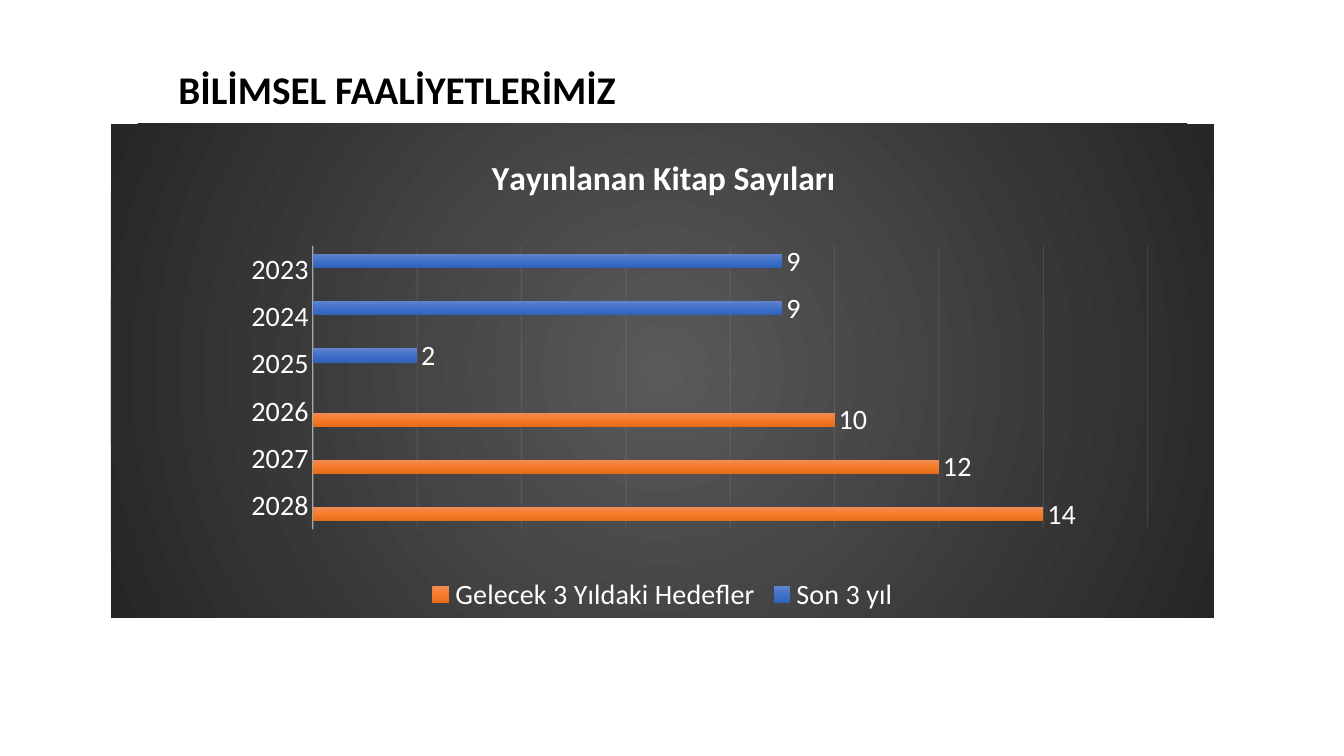
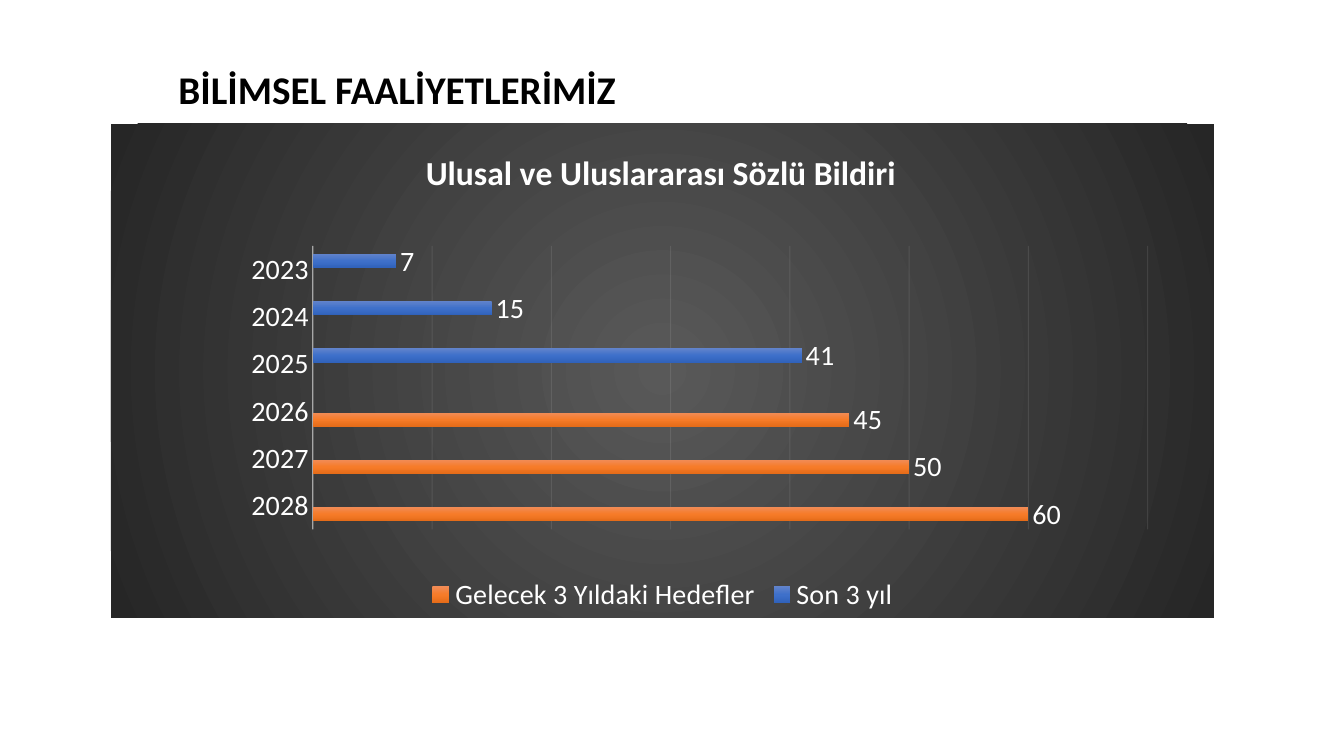
import pptx
import pptx.chart.data
import pptx.dml.color
import pptx.enum.chart
import pptx.enum.text
import pptx.oxml
import pptx.oxml.ns
import pptx.util

Inches = pptx.util.Inches
Pt = pptx.util.Pt
qn = pptx.oxml.ns.qn
enums = pptx.enum.chart

# Shared look
FONT = "Calibri"
HEAD = "BİLİMSEL FAALİYETLERİMİZ"
COLORS = {"ink": "000000", "text": "FFFFFF", "line": "F2F2F2"}
PANEL = ("595959", "262626")
GLOW = '<a:path path="circle"><a:fillToRect l="50000" t="50000" r="50000" b="50000"/></a:path>'
DOWN = '<a:lin ang="5400000" scaled="0"/>'
TITLE_BOX = (1.67, 0.4, 8.08, 1.02)
CHART_BOX = (1.1, 1.23, 10.94, 4.9)
PLOT_BOX = (0.183, 0.247, 0.757, 0.574)

# Chart content: past years first, targets after
YEARS = [str(year) for year in range(2023, 2029)]
GROUPS = (
    ("Son 3 yıl", ("6183CB", "3E70CA", "3062BB")),
    ("Gelecek 3 Yıldaki Hedefler", ("F18C57", "F67B28", "E56C19")),
)
SLIDES = (
    {"title": "Yayınlanan Kitap Sayıları", "at": (0.34, 0.05),
     "past": (9, 9, 2), "goals": (10, 12, 14), "top": 16, "step": 2},
    {"title": "Ulusal ve Uluslararası Sözlü Bildiri", "at": (0.28, 0.04),
     "past": (7, 15, 41), "goals": (45, 50, 60), "top": 70, "step": 10},
)


def color(name):
    return pptx.dml.color.RGBColor.from_string(COLORS[name])


def style(font, size, name, bold=False):
    font.name, font.size, font.bold = FONT, Pt(size), bold
    font.color.rgb = color(name)


def blend(props, stops, way):
    """Give shape properties an evenly spaced gradient."""
    last = len(stops) - 1
    marks = "".join(
        f'<a:gs pos="{100000 * i // last}"><a:srgbClr val="{tone}"/></a:gs>'
        for i, tone in enumerate(stops))
    props.insert(0, pptx.oxml.parse_xml(
        f'<a:gradFill {pptx.oxml.ns.nsdecls("a")} rotWithShape="1">'
        f"<a:gsLst>{marks}</a:gsLst>{way}</a:gradFill>"))


def rule(line, width, alpha):
    """Style a pale, partly transparent line."""
    line.width = Pt(width)
    line.color.rgb = color("line")
    tone = line._get_or_add_ln().find(".//" + qn("a:srgbClr"))
    tone.append(pptx.oxml.parse_xml(
        f'<a:alpha {pptx.oxml.ns.nsdecls("a")} val="{alpha * 1000}"/>'))


def place(part, spot, inner=False):
    """Set a manual layout, in fractions of the chart."""
    old = part.find(qn("c:layout"))
    if old is not None:
        part.remove(old)
    rows = '<c:layoutTarget val="inner"/>' if inner else ""
    rows += '<c:xMode val="edge"/><c:yMode val="edge"/>'
    rows += "".join(f'<c:{key} val="{val}"/>' for key, val in zip("xywh", spot))
    mark = part.find(qn("c:overlay"))
    mark = part[0] if mark is None else mark
    mark.addprevious(pptx.oxml.parse_xml(
        f'<c:layout {pptx.oxml.ns.nsdecls("c")}>'
        f"<c:manualLayout>{rows}</c:manualLayout></c:layout>"))


def add_title(slide, box):
    title = slide.shapes.title
    title.left, title.top, title.width, title.height = map(Inches, box)
    frame = title.text_frame
    frame.text = HEAD
    frame.word_wrap = True
    frame.auto_size = pptx.enum.text.MSO_AUTO_SIZE.NONE
    frame.vertical_anchor = pptx.enum.text.MSO_ANCHOR.MIDDLE
    para = frame.paragraphs[0]
    para.alignment = pptx.enum.text.PP_ALIGN.LEFT
    para.line_spacing = 0.9
    style(para.font, 28, "ink", True)


def set_axes(chart, item):
    years = chart.category_axis
    years.reverse_order = True
    years.major_tick_mark = enums.XL_TICK_MARK.NONE
    rule(years.format.line, 1, 54)
    scale = chart.value_axis
    scale.visible = False
    scale.minimum_scale, scale.maximum_scale = 0, item["top"]
    scale.major_unit = item["step"]
    scale.has_major_gridlines = True
    rule(scale.major_gridlines.format.line, 0.75, 10)


def set_bars(plot):
    plot.gap_width, plot.overlap = 115, -20
    plot.vary_by_categories = False
    for bars, (_, stops) in zip(plot.series, GROUPS):
        bars.invert_if_negative = False
        blend(bars._element.get_or_add_spPr(), stops, DOWN)
        labels = bars.data_labels
        labels.show_value = True
        labels.position = enums.XL_LABEL_POSITION.OUTSIDE_END
        style(labels.font, 20, "text")


def add_chart(slide, box, item):
    data = pptx.chart.data.CategoryChartData()
    data.categories = YEARS
    blank = (None,) * 3
    rows = (item["past"] + blank, blank + item["goals"])
    for (name, _), vals in zip(GROUPS, rows):
        data.add_series(name, vals)
    chart = slide.shapes.add_chart(
        enums.XL_CHART_TYPE.BAR_CLUSTERED, *map(Inches, box), data).chart
    style(chart.font, 20, "text")

    # Dark panel
    root = chart._chartSpace
    props = pptx.oxml.parse_xml(
        f'<c:spPr {pptx.oxml.ns.nsdecls("c", "a")}><a:ln><a:noFill/></a:ln></c:spPr>')
    blend(props, PANEL, GLOW)
    root.find(qn("c:txPr")).addprevious(props)

    # Chart title and legend
    chart.has_title = True
    head = chart.chart_title
    head.text_frame.text = item["title"]
    style(head.text_frame.paragraphs[0].font, 24, "text", True)
    place(head._element, item["at"])
    chart.has_legend = True
    chart.legend.position = enums.XL_LEGEND_POSITION.BOTTOM
    chart.legend.include_in_layout = False

    # Plot
    place(root.chart.plotArea, PLOT_BOX, True)
    set_axes(chart, item)
    set_bars(chart.plots[0])


def main():
    deck = pptx.Presentation()
    deck.slide_width, deck.slide_height = Inches(13.33), Inches(7.5)
    for item in SLIDES:
        slide = deck.slides.add_slide(deck.slide_layouts[5])
        add_title(slide, TITLE_BOX)
        add_chart(slide, CHART_BOX, item)
    deck.save("out.pptx")


if __name__ == "__main__":
    main()
